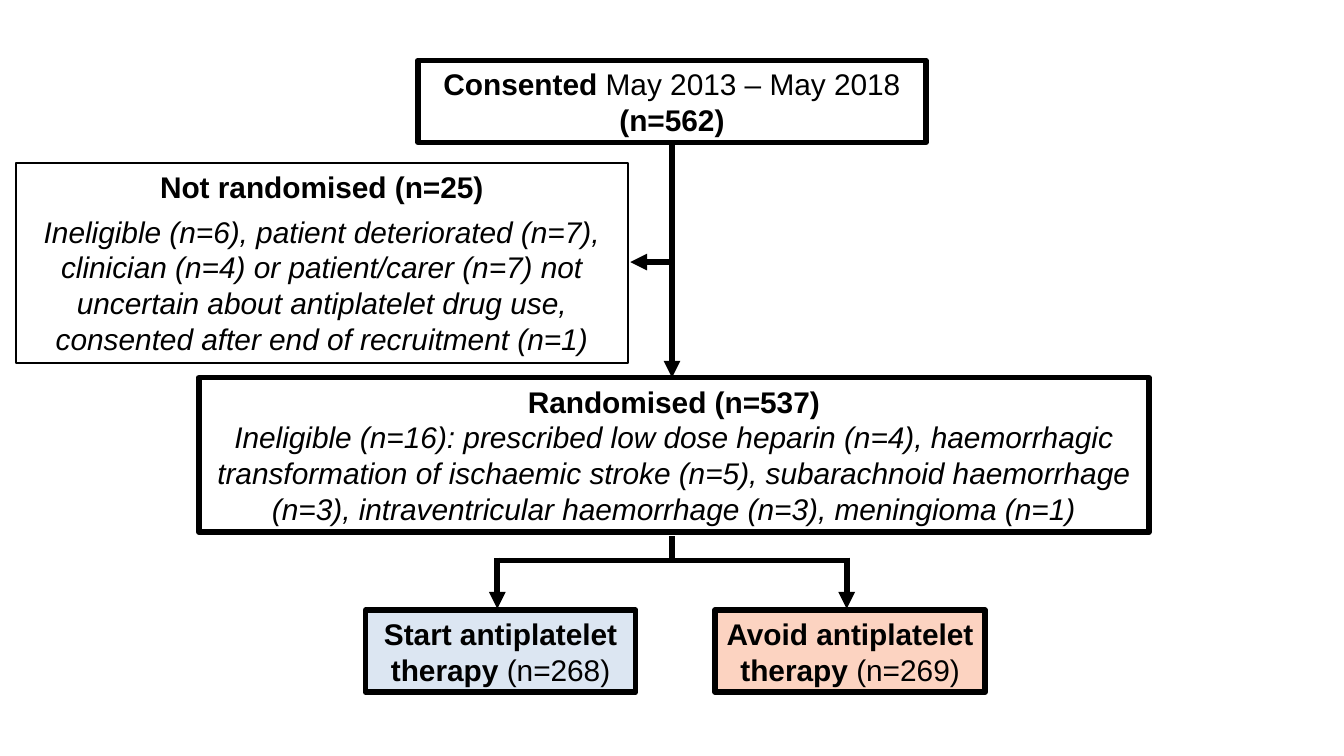
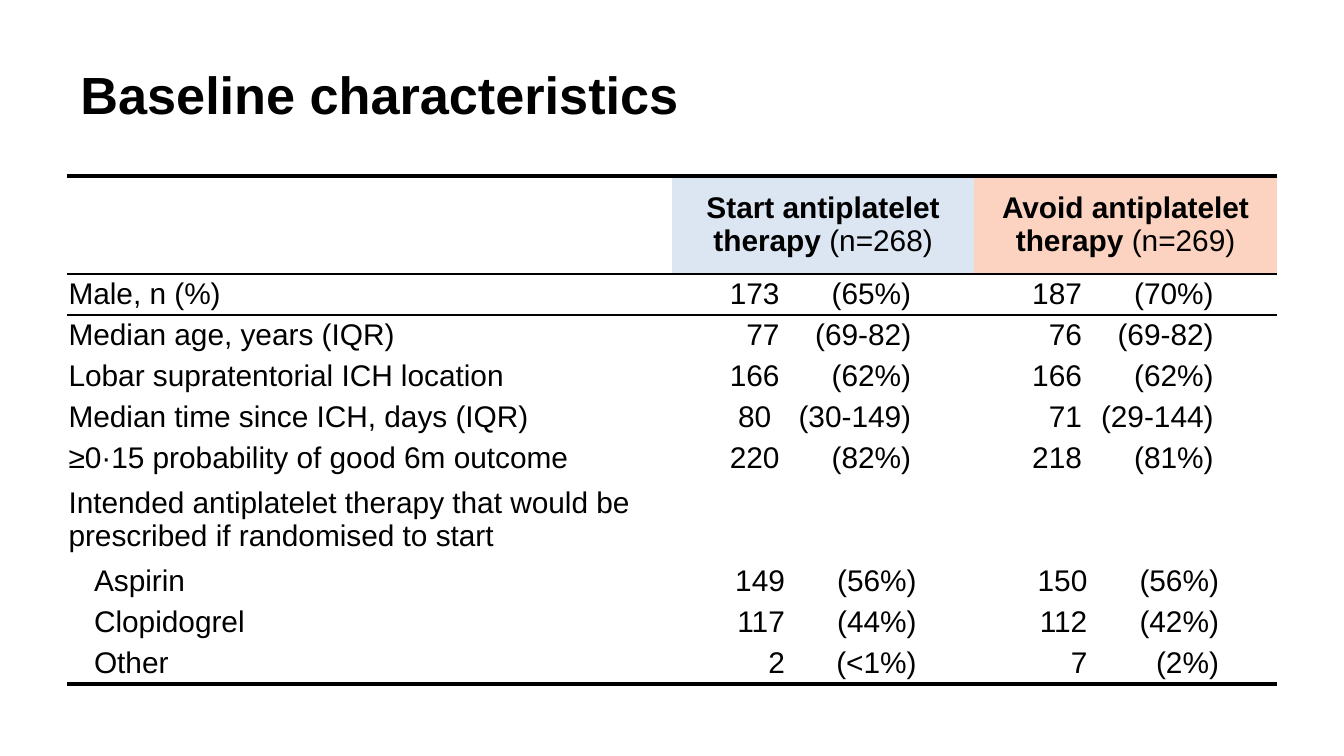
from dataclasses import dataclass

from lxml import etree
from pptx import Presentation
from pptx.dml.color import RGBColor
from pptx.enum.shapes import MSO_CONNECTOR, MSO_SHAPE
from pptx.enum.text import MSO_ANCHOR, PP_ALIGN
from pptx.oxml.ns import qn
from pptx.util import Emu, Inches, Pt

RECT = MSO_SHAPE.RECTANGLE
STRAIGHT = MSO_CONNECTOR.STRAIGHT
MIDDLE = MSO_ANCHOR.MIDDLE
LEFT, CENTER = PP_ALIGN.LEFT, PP_ALIGN.CENTER

# Shared look
BLACK, START_BLUE, AVOID_PINK = "000000", "DCE6F2", "FCD3C1"
BODY = {"name": "Arial", "size": Pt(16), "bold": False, "italic": False}
STYLES = {
    "plain": {},
    "bold": {"bold": True},
    "italic": {"italic": True},
    "title": {"bold": True, "size": Pt(28)},
}
NO_TABLE_STYLE = "{2D5ABB26-0587-4C30-8999-92F81FD0307C}"

# The slide is a grid of 100 columns by 56.25 rows of square units
SLIDE_W, SLIDE_H = Inches(10), Inches(5.625)
COLUMNS = 100

Run = tuple[str, str]
Paragraphs = list[list[Run]]


@dataclass
class Box:
    left: float
    top: float
    width: float
    height: float
    paragraphs: Paragraphs
    fill: str | None = None
    border: float = 3


@dataclass
class Line:
    x1: float
    y1: float
    x2: float
    y2: float
    arrow: bool = False


@dataclass
class Row:
    label: str
    start: str = ""
    avoid: str = ""
    height: float = 3.05
    indented: bool = False


def grid(units: float) -> Emu:
    return Emu(round(units * SLIDE_W / COLUMNS))


def rgb(color: str) -> RGBColor:
    return RGBColor.from_string(color)


def set_fill(fill, color: str | None) -> None:
    if color:
        fill.solid()
        fill.fore_color.rgb = rgb(color)
    else:
        fill.background()


def set_margins(target, side: float, end: float) -> None:
    for name, value in {"left": side, "right": side, "top": end, "bottom": end}.items():
        setattr(target, f"margin_{name}", grid(value))


def write(p, runs: list[Run], align: PP_ALIGN = LEFT) -> None:
    p.alignment = align
    for text, style in runs:
        r = p.add_run()
        r.text = text.rstrip("\n")
        for name, value in {**BODY, **STYLES[style]}.items():
            setattr(r.font, name, value)
        r.font.color.rgb = rgb(BLACK)
        if text.endswith("\n"):
            p.add_line_break()


def add_box(s, box: Box) -> None:
    sp = s.shapes.add_shape(
        RECT, *map(grid, (box.left, box.top, box.width, box.height)))
    sp.shadow.inherit = False
    set_fill(sp.fill, box.fill)
    sp.line.color.rgb = rgb(BLACK)
    sp.line.width = Pt(box.border)
    tf = sp.text_frame
    tf.word_wrap = True
    tf.vertical_anchor = MIDDLE
    set_margins(tf, 0.7, 0.4)
    for i, runs in enumerate(box.paragraphs):
        p = tf.add_paragraph() if i else tf.paragraphs[0]
        write(p, runs, CENTER)
        if i:
            p.space_before = p.space_after = Pt(4.5)


def add_line(s, line: Line) -> None:
    c = s.shapes.add_connector(
        STRAIGHT, *map(grid, (line.x1, line.y1, line.x2, line.y2)))
    c.line.color.rgb = rgb(BLACK)
    c.line.width = Pt(3)
    if line.arrow:
        ln = c.line._get_or_add_ln()
        etree.SubElement(ln, qn("a:tailEnd"), type="triangle")
    etree.SubElement(c._element.spPr, qn("a:effectLst"))


def add_title(s, text: str) -> None:
    tf = s.shapes.add_textbox(*map(grid, (5, 2.3, 78.5, 9.4))).text_frame
    tf.word_wrap = True
    tf.vertical_anchor = MIDDLE
    write(tf.paragraphs[0], [(text, "title")])


def add_tabs(p, stops: tuple[float, ...]) -> None:
    tabs = etree.SubElement(p._p.get_or_add_pPr(), qn("a:tabLst"))
    for stop in stops:
        etree.SubElement(tabs, qn("a:tab"), pos=str(grid(stop)), algn="r")


def set_borders(cell, widths: dict[str, float]) -> None:
    """Draw cell edges; widths maps lnT and lnB, in that order, to points."""
    tcPr = cell._tc.get_or_add_tcPr()
    for i, (edge, width) in enumerate(widths.items()):
        ln = etree.Element(qn(f"a:{edge}"), w=str(Pt(width)))
        fill = etree.SubElement(ln, qn("a:solidFill"))
        etree.SubElement(fill, qn("a:srgbClr"), val=BLACK)
        tcPr.insert(i, ln)


# What both slides say about the two arms
ARMS = [
    ([("Start antiplatelet therapy", "bold"), (" (n=268)", "plain")], START_BLUE),
    ([("Avoid antiplatelet therapy ", "bold"), ("(n=269)", "plain")], AVOID_PINK),
]

# Trial flow
MID = COLUMNS / 2
ARM_CENTERS = (MID - 13, MID + 13)
ARM_W, ARM_TOP, FORK_Y = 20.1, 45.4, 41.7

FLOW_BOXES = [
    Box(31.1, 4.5, 37.8, 6.1, [[
        ("Consented ", "bold"), ("May 2013 – May 2018 ", "plain"), ("(n=562)", "bold")]]),
    Box(1.2, 12.1, 45.5, 14.9, [
        [("Not randomised (n=25)", "bold")],
        [("Ineligible (n=6), patient deteriorated (n=7), clinician (n=4) or "
          "patient/carer (n=7) not uncertain about antiplatelet drug use, "
          "consented after end of recruitment (n=1)", "italic")]], border=1),
    Box(14.8, 28.1, 70.7, 11.5, [[
        ("Randomised (n=537)\n", "bold"),
        ("Ineligible (n=16): prescribed low dose heparin (n=4), haemorrhagic "
         "transformation of ischaemic stroke (n=5), subarachnoid haemorrhage "
         "(n=3), intraventricular haemorrhage (n=3), meningioma (n=1)", "italic")]]),
    *(Box(x - ARM_W / 2 + 0.25, ARM_TOP, ARM_W, 6.1, [runs], color)
      for x, (runs, color) in zip(ARM_CENTERS, ARMS)),
]
FLOW_LINES = [
    Line(MID, 10.6, MID, 28.1, arrow=True),
    Line(MID - 0.2, 19.5, 46.9, 19.5, arrow=True),
    *(Line(x, FORK_Y - 0.2, x, ARM_TOP - 0.1, arrow=True) for x in ARM_CENTERS),
    Line(ARM_CENTERS[0], FORK_Y, ARM_CENTERS[1], FORK_Y),
    Line(MID, 39.9, MID, FORK_Y),
]

# Baseline table
COL_WIDTHS = (45, 22.5, 22.5)
HEAD_H = 7.3
TAB_STOPS = (7.9, 17.7)
ROWS = [
    Row("Male, n (%)", "\t173\t(65%)", "\t187\t(70%)"),
    Row("Median age, years (IQR)", "\t77\t(69-82)", "\t76\t(69-82)"),
    Row("Lobar supratentorial ICH location", "\t166\t(62%)", "\t166\t(62%)"),
    Row("Median time since ICH, days (IQR)", "\t80 \t(30-149)", "\t71\t(29-144)"),
    Row("≥0·15 probability of good 6m outcome", "\t220\t(82%)", "\t218\t(81%)"),
    Row("Intended antiplatelet therapy that would be prescribed if "
        "randomised to start", height=6.1),
    Row("Aspirin", "\t149\t(56%)", "\t150\t(56%)", indented=True),
    Row("Clopidogrel", "\t117\t(44%)", "\t112\t(42%)", indented=True),
    Row("Other", "\t2\t(<1%)", "\t7\t(2%)", indented=True),
]
RULES = {
    0: {"lnT": 2.25, "lnB": 1},
    1: {"lnT": 1, "lnB": 1},
    len(ROWS): {"lnB": 2.25},
}


def add_baseline_table(s) -> None:
    heights = [HEAD_H, *(row.height for row in ROWS)]
    frame = s.shapes.add_table(
        len(heights), len(COL_WIDTHS),
        *map(grid, (5, 13.1, sum(COL_WIDTHS), sum(heights))))
    table = frame.table
    table.first_row = table.horz_banding = False
    table._tbl.tblPr.find(qn("a:tableStyleId")).text = NO_TABLE_STYLE
    for column, width in zip(table.columns, COL_WIDTHS):
        column.width = grid(width)
    for i, height in enumerate(heights):
        table.rows[i].height = grid(height)
        for cell in table.rows[i].cells:
            cell.vertical_anchor = MIDDLE
            set_margins(cell, 0.1, 0)
            set_fill(cell.fill, None)
            set_borders(cell, RULES.get(i, {}))

    # Header cells
    for j, (runs, color) in enumerate(ARMS, 1):
        cell = table.cell(0, j)
        set_fill(cell.fill, color)
        write(cell.text_frame.paragraphs[0], runs, CENTER)

    # Body cells
    for i, row in enumerate(ROWS, 1):
        for j, text in enumerate((row.label, row.start, row.avoid)):
            if not text:
                continue
            cell = table.cell(i, j)
            p = cell.text_frame.paragraphs[0]
            if j:
                add_tabs(p, TAB_STOPS)
                set_margins(cell, 0.5 if row.indented else 0.1, 0)
            elif row.indented:
                p._p.get_or_add_pPr().set("marL", str(grid(1.9)))
            write(p, [(text, "plain")])


def main() -> None:
    prs = Presentation()
    prs.slide_width, prs.slide_height = SLIDE_W, SLIDE_H
    blank = prs.slide_layouts[6]

    # Slide 1: trial flow
    s = prs.slides.add_slide(blank)
    for box in FLOW_BOXES:
        add_box(s, box)
    for line in FLOW_LINES:
        add_line(s, line)

    # Slide 2: baseline characteristics
    s = prs.slides.add_slide(blank)
    add_title(s, "Baseline characteristics")
    add_baseline_table(s)

    prs.save("out.pptx")


if __name__ == "__main__":
    main()
